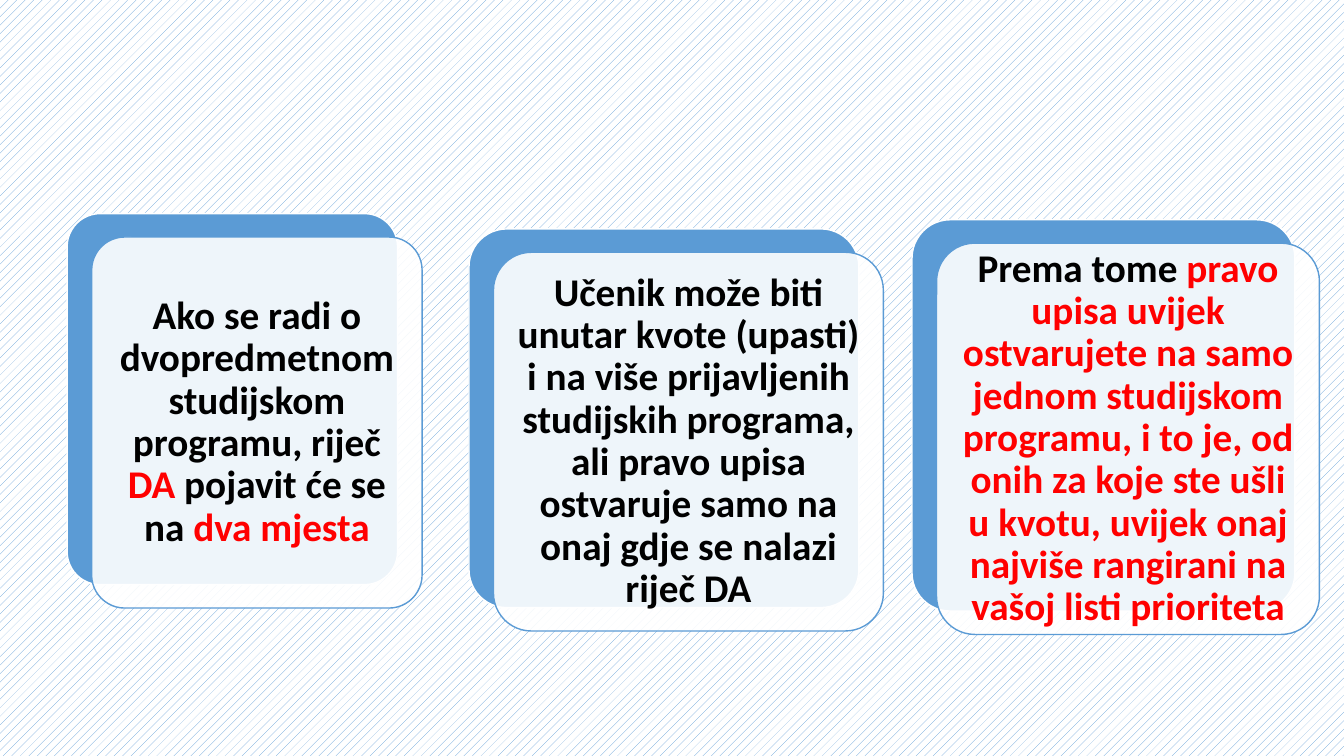
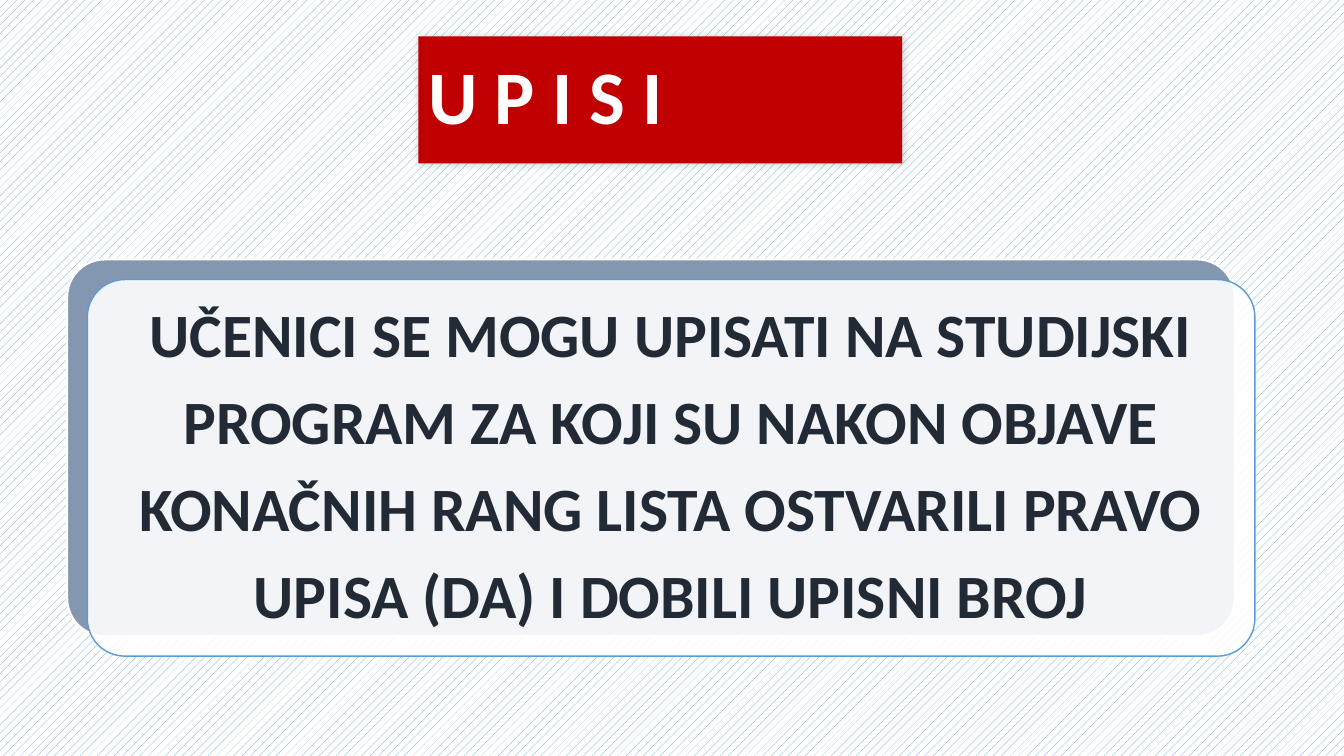
from lxml.etree import SubElement
from pptx import Presentation
from pptx.dml.color import RGBColor
from pptx.enum.dml import MSO_PATTERN
from pptx.enum.shapes import MSO_SHAPE
from pptx.enum.text import MSO_ANCHOR, MSO_AUTO_SIZE, PP_ALIGN
from pptx.oxml import parse_xml
from pptx.oxml.ns import nsdecls, qn
from pptx.util import Pt

COLORS = {
    "blue": "5B9BD5",
    "white": "FFFFFF",
    "slate": "8497B0",
    "navy": "222A35",
    "black": "000000",
    "red": "FF0000",
    "dark_red": "C00000",
}
FONT = "Calibri"


def color(name):
    return RGBColor.from_string(COLORS[name])


def add_card(slide, box, offset, back_color, back_line, inset, size, paragraphs):
    left, top, width, height = box
    layers = [(0, 0, back_color, "white", back_line), (*offset, "white", "blue", 1)]
    for shift_x, shift_y, fill, line, line_width in layers:
        card = slide.shapes.add_shape(
            MSO_SHAPE.ROUNDED_RECTANGLE,
            Pt(left + shift_x), Pt(top + shift_y), Pt(width), Pt(height))
        card.adjustments[0] = 0.1
        card.shadow.inherit = False
        card.fill.solid()
        card.fill.fore_color.rgb = color(fill)
        card.line.color.rgb = color(line)
        card.line.width = Pt(line_width)

    fill_color = card.fill._xPr.find(qn("a:solidFill"))[0]
    SubElement(fill_color, qn("a:alpha"), val="90000")

    text_frame = card.text_frame
    text_frame.word_wrap = True
    text_frame.vertical_anchor = MSO_ANCHOR.MIDDLE
    text_frame.margin_left = text_frame.margin_right = Pt(inset)
    text_frame.margin_top = text_frame.margin_bottom = Pt(inset)
    for index, parts in enumerate(paragraphs):
        paragraph = text_frame.add_paragraph() if index else text_frame.paragraphs[0]
        paragraph.alignment = PP_ALIGN.CENTER
        paragraph.line_spacing = 0.9
        if index:
            paragraph.space_before = Pt(14.5)
        for text, text_color in parts:
            run = paragraph.add_run()
            run.text = text
            run.font.name = FONT
            run.font.size = Pt(size)
            run.font.bold = True
            run.font.color.rgb = color(text_color)


presentation = Presentation()
presentation.slide_width = Pt(960)
presentation.slide_height = Pt(540)
title_only_layout = presentation.slide_layouts[5]
blank_layout = presentation.slide_layouts[6]

background = presentation.slide_master.background.fill
background.patterned()
background.pattern = MSO_PATTERN.PERCENT_20
background.fore_color.rgb = color("blue")
background.back_color.rgb = color("white")

rules_slide = presentation.slides.add_slide(blank_layout)
rules = [
    ((48, 152.6, 236, 265), [
        ("Ako se radi o dvopredmetnom studijskom programu, riječ ", "black"),
        ("DA", "red"),
        (" pojavit će se na ", "black"),
        ("dva mjesta", "red"),
    ]),
    ((335, 163.5, 278.5, 270.5), [
        ("Učenik može biti unutar kvote (upasti) i na više prijavljenih "
         "studijskih programa, ali pravo upisa ostvaruje samo na onaj gdje "
         "se nalazi riječ DA", "black"),
    ]),
    ((651.5, 157, 273.5, 279.5), [
        ("Prema tome ", "black"),
        ("pravo upisa uvijek ostvarujete na samo jednom studijskom programu, "
         "i to je, od onih za koje ste ušli u kvotu, uvijek onaj najviše "
         "rangirani na vašoj listi prioriteta", "red"),
    ]),
]
for box, parts in rules:
    add_card(rules_slide, box, (17.5, 16.7), "blue", 1, 8.4, 28, [parts])

enrolment_slide = presentation.slides.add_slide(title_only_layout)
title = enrolment_slide.shapes.title
title.left, title.top, title.width, title.height = Pt(298.8), Pt(26), Pt(345.6), Pt(90.7)
title.fill.solid()
title.fill.fore_color.rgb = color("dark_red")
title._element.spPr.append(parse_xml(
    f'<a:effectLst {nsdecls("a")}>'
    '<a:outerShdw blurRad="76200" dist="12700" dir="2700000" algn="tl" rotWithShape="0">'
    f'<a:srgbClr val="{COLORS["black"]}"><a:alpha val="20000"/></a:srgbClr>'
    '</a:outerShdw></a:effectLst>'))
title.text_frame.text = "U P I S I"
title.text_frame.auto_size = MSO_AUTO_SIZE.NONE
title.text_frame.vertical_anchor = MSO_ANCHOR.MIDDLE
title_paragraph = title.text_frame.paragraphs[0]
title_paragraph.alignment = PP_ALIGN.LEFT
title_paragraph.line_spacing = 0.9
title_font = title_paragraph.runs[0].font
title_font.name = FONT
title_font.size = Pt(54)
title_font.bold = True
title_font.color.rgb = color("white")

enrolment_lines = [
    "UČENICI SE MOGU UPISATI NA STUDIJSKI",
    "PROGRAM ZA KOJI SU NAKON OBJAVE",
    "KONAČNIH RANG LISTA OSTVARILI PRAVO",
    "UPISA (DA) I DOBILI UPISNI BROJ",
]
add_card(enrolment_slide, (48, 185.3, 834, 269), (14.4, 14.4), "slate", 1.5, 10.8, 44,
         [[(line, "navy")] for line in enrolment_lines])

presentation.save("out.pptx")
